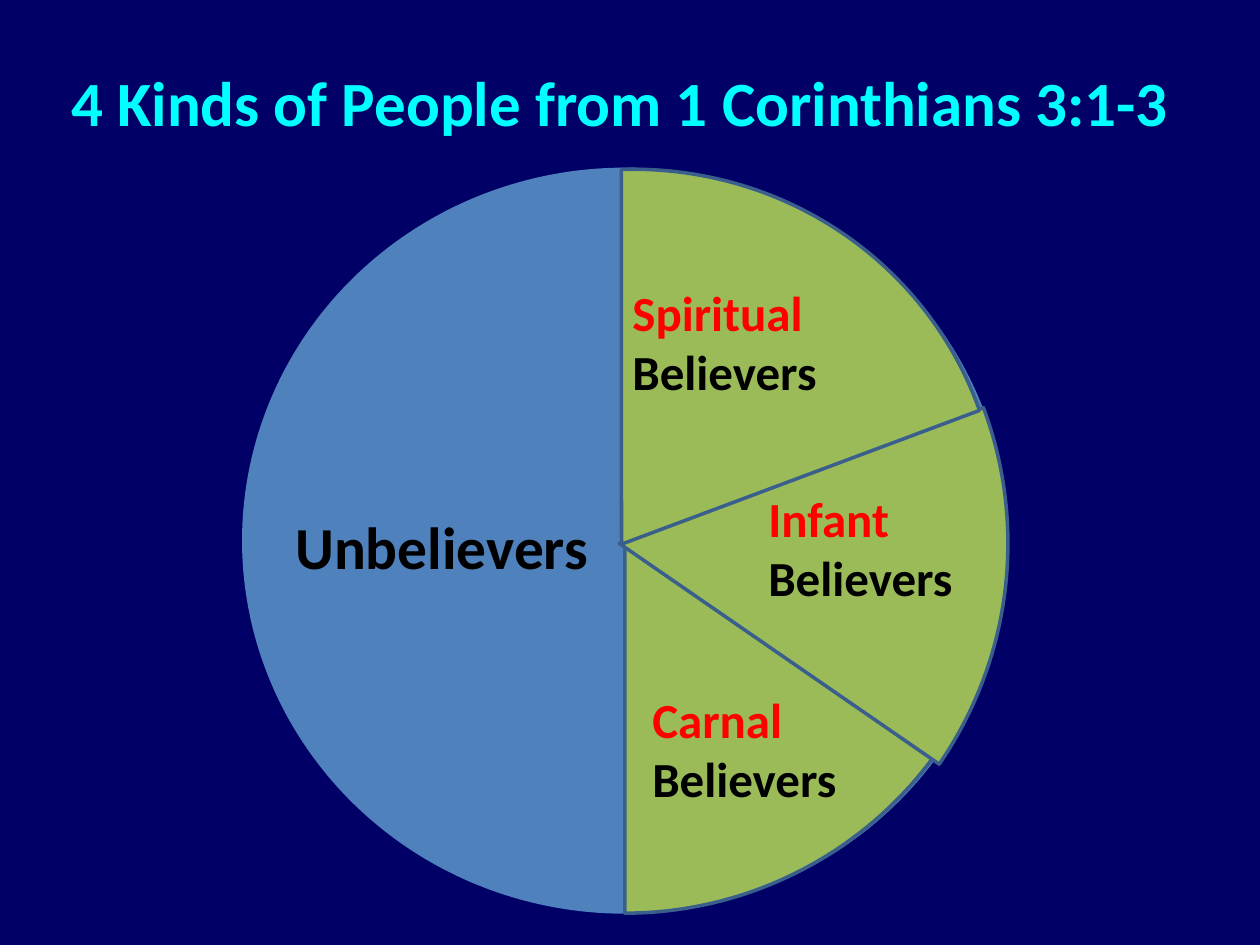
import pptx
import pptx.dml.color
import pptx.enum.shapes
import pptx.enum.text
import pptx.util

Cm = pptx.util.Cm
Pt = pptx.util.Pt
RGBColor = pptx.dml.color.RGBColor
MSO_SHAPE = pptx.enum.shapes.MSO_SHAPE
MSO_ANCHOR = pptx.enum.text.MSO_ANCHOR
PP_ALIGN = pptx.enum.text.PP_ALIGN

NAVY = RGBColor(0x00, 0x00, 0x66)
BLUE = RGBColor(0x4F, 0x81, 0xBD)
GREEN = RGBColor(0x9B, 0xBB, 0x59)
OUTLINE = RGBColor(0x3A, 0x5F, 0x8C)
CYAN = RGBColor(0x00, 0xFF, 0xFF)
RED = RGBColor(0xFF, 0x00, 0x00)
BLACK = RGBColor(0x00, 0x00, 0x00)

TITLE = "4 Kinds of People from 1 Corinthians 3:1-3"
TITLE_BOX = (1.07, 0.84, 22.86, 2.39)
CIRCLE_BOX = (4.88, 3.38, 15.44, 15.04)
UNBELIEVERS_BOX = (4.88, 10.16, 8.05, 1.7)

# box, rotation, start angle, end angle
SLICES = [
    ((4.88, 2.97, 15.44, 15.44), 0, 34.96, 90),
    ((4.65, 3.12, 15.67, 15.67), 304.6, 34.96, 90),
    ((5.05, 3.25, 14.96, 15.44), 235, 34.96, 104.51),
]
BELIEVERS = [
    ("Infant", (15.24, 9.73, 4.65, 2.36), MSO_ANCHOR.TOP),
    ("Carnal", (12.9, 13.77, 5.08, 2.34), MSO_ANCHOR.TOP),
    ("Spiritual", (12.5, 5.72, 6.15, 2.31), MSO_ANCHOR.MIDDLE),
]
ADJUSTMENT_PER_DEGREE = 0.6


def place(sp, box):
    sp.left, sp.top, sp.width, sp.height = map(Cm, box)


def write(sp, lines, size, align=PP_ALIGN.LEFT, anchor=MSO_ANCHOR.TOP):
    tf = sp.text_frame
    tf.word_wrap = True
    tf.auto_size = pptx.enum.text.MSO_AUTO_SIZE.NONE
    tf.vertical_anchor = anchor
    for i, (text, color) in enumerate(lines):
        p = tf.add_paragraph() if i else tf.paragraphs[0]
        p.alignment = align
        r = p.add_run()
        r.text = text
        r.font.name = "Calibri"
        r.font.size = Pt(size)
        r.font.bold = True
        r.font.color.rgb = color


def add_shape(s, kind, box, fill):
    sp = s.shapes.add_shape(kind, *map(Cm, box))
    sp.shadow.inherit = False
    sp.fill.solid()
    sp.fill.fore_color.rgb = fill
    sp.line.fill.background()
    return sp


def main():
    prs = pptx.Presentation()
    prs.slide_width, prs.slide_height = Cm(25.4), Cm(19.05)
    s = prs.slides.add_slide(prs.slide_layouts.get_by_name("Title Only"))
    s.background.fill.solid()
    s.background.fill.fore_color.rgb = NAVY

    add_shape(s, MSO_SHAPE.FLOWCHART_OR, CIRCLE_BOX, BLUE)
    for box, rotation, start, end in SLICES:
        sp = add_shape(s, MSO_SHAPE.PIE, box, GREEN)
        sp.adjustments[0] = start * ADJUSTMENT_PER_DEGREE
        sp.adjustments[1] = end * ADJUSTMENT_PER_DEGREE
        sp.rotation = rotation
        sp.line.color.rgb = OUTLINE
        sp.line.width = Pt(2)

    place(s.shapes.title, TITLE_BOX)
    write(s.shapes.title, [(TITLE, CYAN)], 36, PP_ALIGN.CENTER, MSO_ANCHOR.MIDDLE)

    sp = s.shapes.add_textbox(*map(Cm, UNBELIEVERS_BOX))
    write(sp, [("Unbelievers", BLACK)], 34, PP_ALIGN.CENTER)
    for kind, box, anchor in BELIEVERS:
        sp = s.shapes.add_textbox(*map(Cm, box))
        write(sp, [(kind, RED), ("Believers", BLACK)], 28, anchor=anchor)

    prs.save("out.pptx")


if __name__ == "__main__":
    main()
